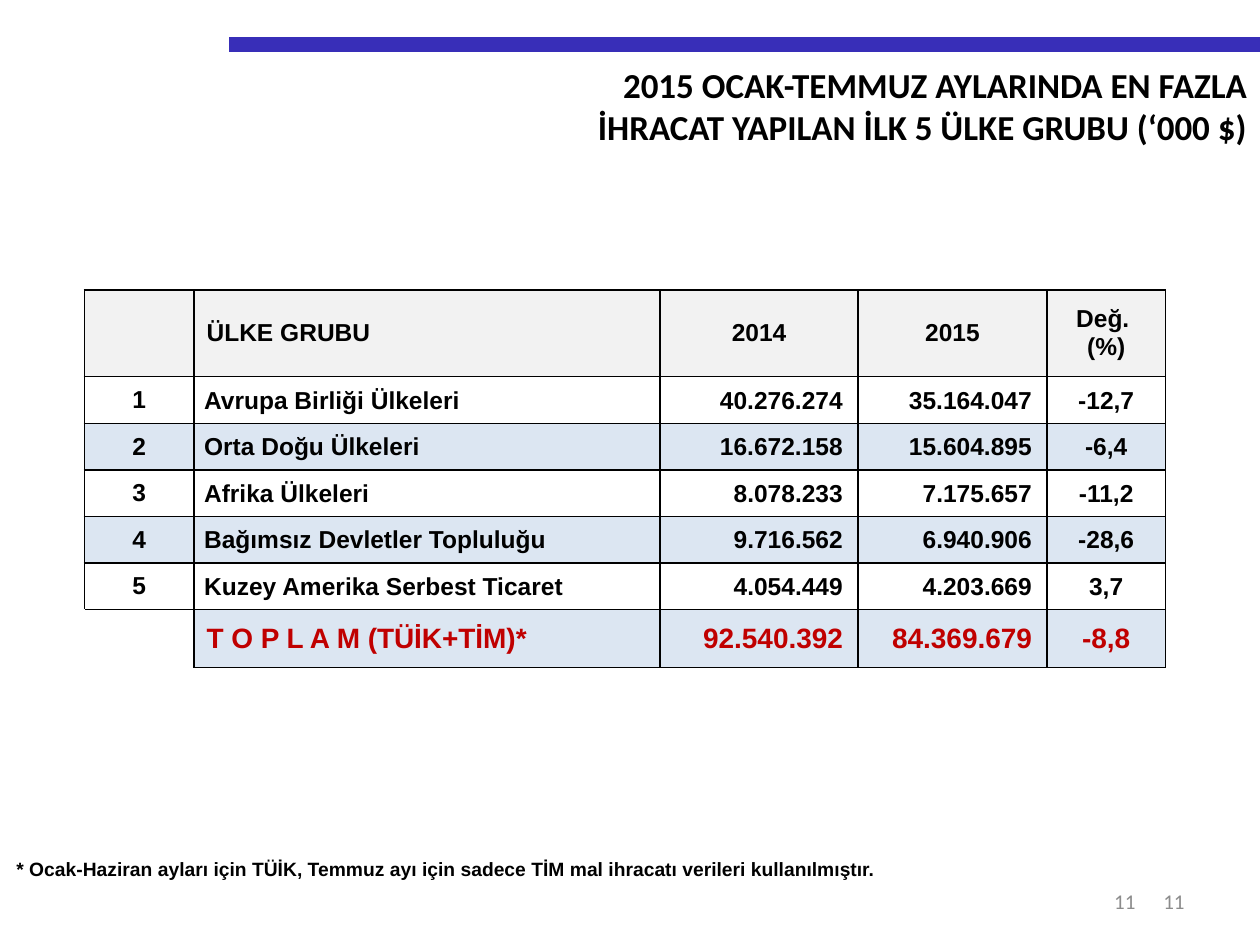
from lxml import etree
from pptx import Presentation
from pptx.dml.color import RGBColor
from pptx.enum.shapes import MSO_CONNECTOR
from pptx.enum.text import MSO_ANCHOR, MSO_AUTO_SIZE, PP_ALIGN
from pptx.oxml.ns import qn
from pptx.util import Inches, Pt

LEFT, MID, RIGHT = PP_ALIGN.LEFT, PP_ALIGN.CENTER, PP_ALIGN.RIGHT
CENTER, TOP = MSO_ANCHOR.MIDDLE, MSO_ANCHOR.TOP
NO_FIT = MSO_AUTO_SIZE.NONE
STRAIGHT = MSO_CONNECTOR.STRAIGHT

WIDTH, HEIGHT = 10, 7.5
COLS = 100  # square grid, 100 columns by 75 rows
BLACK, RED, GREY, BLUE = "000000", "C00000", "8C8C8C", "382EB8"
HEAD, BAND = "F2F2F2", "DCE6F2"

# cell margins: left, top, right, bottom
PLAIN = (1, 0.5, 1, 0.5)
NAME = (0.8, 0.1, 0.1, 0)
VALUE = (0.1, 0.1, 1.2, 0)
TIGHT = (0.1, 0.1, 0.1, 0)

HEADER = ["", "ÜLKE GRUBU", "2014", "2015", "Değ. \n(%)"]
GROUPS = [
    ["1", "Avrupa Birliği Ülkeleri", "40.276.274", "35.164.047", "-12,7"],
    ["2", "Orta Doğu Ülkeleri", "16.672.158", "15.604.895", "-6,4"],
    ["3", "Afrika Ülkeleri", "8.078.233", "7.175.657", "-11,2"],
    ["4", "Bağımsız Devletler Topluluğu", "9.716.562", "6.940.906", "-28,6"],
    ["5", "Kuzey Amerika Serbest Ticaret", "4.054.449", "4.203.669", "3,7"],
]
TOTAL = ["", "T O P L A M (TÜİK+TİM)*", "92.540.392", "84.369.679", "-8,8"]
NOTE = ("* Ocak-Haziran ayları için TÜİK, Temmuz ayı için sadece "
        "TİM mal ihracatı verileri kullanılmıştır.")
TITLE = ("2015 OCAK-TEMMUZ AYLARINDA EN FAZLA\n"
         "İHRACAT YAPILAN İLK 5 ÜLKE GRUBU (‘000 $)")


def color(code):
    return RGBColor.from_string(code)


def grid(*units):
    return [Inches(unit * WIDTH / COLS) for unit in units]


class Page:
    """Holds the fonts and the slide being drawn."""
    head, body = "Calibri", "Arial"

    def __init__(self, deck):
        self.slide = deck.slides.add_slide(deck.slide_layouts[5])
        self.shapes = self.slide.shapes

    def label(self, frame, text, font, size, ink, align, bold=True):
        frame.text = text
        for para in frame.paragraphs:
            para.alignment = align
            for run in para.runs:
                run.font.name = font
                run.font.size = Pt(size)
                run.font.bold = bold
                run.font.color.rgb = color(ink)

    def title(self, text, *box):
        shape = self.shapes.title
        shape.left, shape.top, shape.width, shape.height = grid(*box)
        frame = shape.text_frame
        frame.auto_size, frame.vertical_anchor = NO_FIT, TOP
        self.label(frame, text, self.head, 20, BLACK, RIGHT)

    def number(self, text, *box):
        frame = self.shapes.add_textbox(*grid(*box)).text_frame
        frame.word_wrap, frame.vertical_anchor = True, CENTER
        self.label(frame, text, self.head, 12, GREY, RIGHT, bold=False)

    def bar(self, start, end, row, width):
        line = self.shapes.add_connector(STRAIGHT, *grid(start, row, end, row))
        line.line.color.rgb = color(BLUE)
        line.line.width = Pt(width)
        etree.SubElement(line._element.spPr, qn("a:effectLst"))

    def table(self, left, top, cols, rows):
        box = grid(left, top, sum(cols), sum(rows))
        table = self.shapes.add_table(len(rows), len(cols), *box).table
        table.first_row = table.horz_banding = False
        for col, width in zip(table.columns, grid(*cols)):
            col.width = width
        for row, height in zip(table.rows, grid(*rows)):
            row.height = height
        return table

    def cell(self, cell, text, size, ink, align, pad, fill, sides):
        (cell.margin_left, cell.margin_top,
         cell.margin_right, cell.margin_bottom) = grid(*pad)
        cell.vertical_anchor = CENTER
        self.label(cell.text_frame, text, self.body, size, ink, align)
        for side in sides:
            edge = etree.SubElement(cell._tc.get_or_add_tcPr(),
                                    qn("a:ln" + side), w=str(Pt(1)))
            paint = etree.SubElement(edge, qn("a:solidFill"))
            etree.SubElement(paint, qn("a:srgbClr"), val=BLACK)
        if fill:
            cell.fill.solid()
            cell.fill.fore_color.rgb = color(fill)
        else:
            cell.fill.background()

    def exports(self, left, top):
        rows = [HEADER, *GROUPS, TOTAL]
        last = len(rows) - 1
        table = self.table(left, top, [8.7, 37, 15.7, 15, 9.4],
                           [6.9] + [3.7] * len(GROUPS) + [4.6])
        aligns = [MID, LEFT, RIGHT, RIGHT, MID]
        pads = [PLAIN, NAME, VALUE, VALUE, TIGHT]
        for r, row in enumerate(rows):
            for c, text in enumerate(row):
                align, pad = aligns[c], pads[c]
                if r == 0 and c > 1:
                    align = MID
                if r == 0 or (r == last and c == 1):
                    pad = PLAIN
                corner = r == last and c == 0
                fill = HEAD if r == 0 else BAND if r % 2 == 0 else None
                size, ink = (16, RED) if r == last else (14, BLACK)
                self.cell(table.cell(r, c), text, size, ink, align, pad,
                          None if corner else fill,
                          "RT" if corner else "LRTB")

    def note(self, text, left, top, width, height):
        table = self.table(left, top, [width], [height])
        self.cell(table.cell(0, 0), text, 11, BLACK, LEFT, TIGHT, None, "")


def main():
    deck = Presentation()
    deck.slide_width, deck.slide_height = Inches(WIDTH), Inches(HEIGHT)
    page = Page(deck)
    page.bar(18.2, COLS, 3.5, 8.5)
    page.title(TITLE, 10.6, 4.5, 89.4, 7.7)
    page.number("11", 71.7, 69.5, 23.3, 4)
    page.number("11", 70.1, 69.5, 21, 4)
    page.exports(6.7, 23)
    page.note(NOTE, 1.2, 67.4, 74, 3.1)
    deck.save("out.pptx")


if __name__ == "__main__":
    main()
